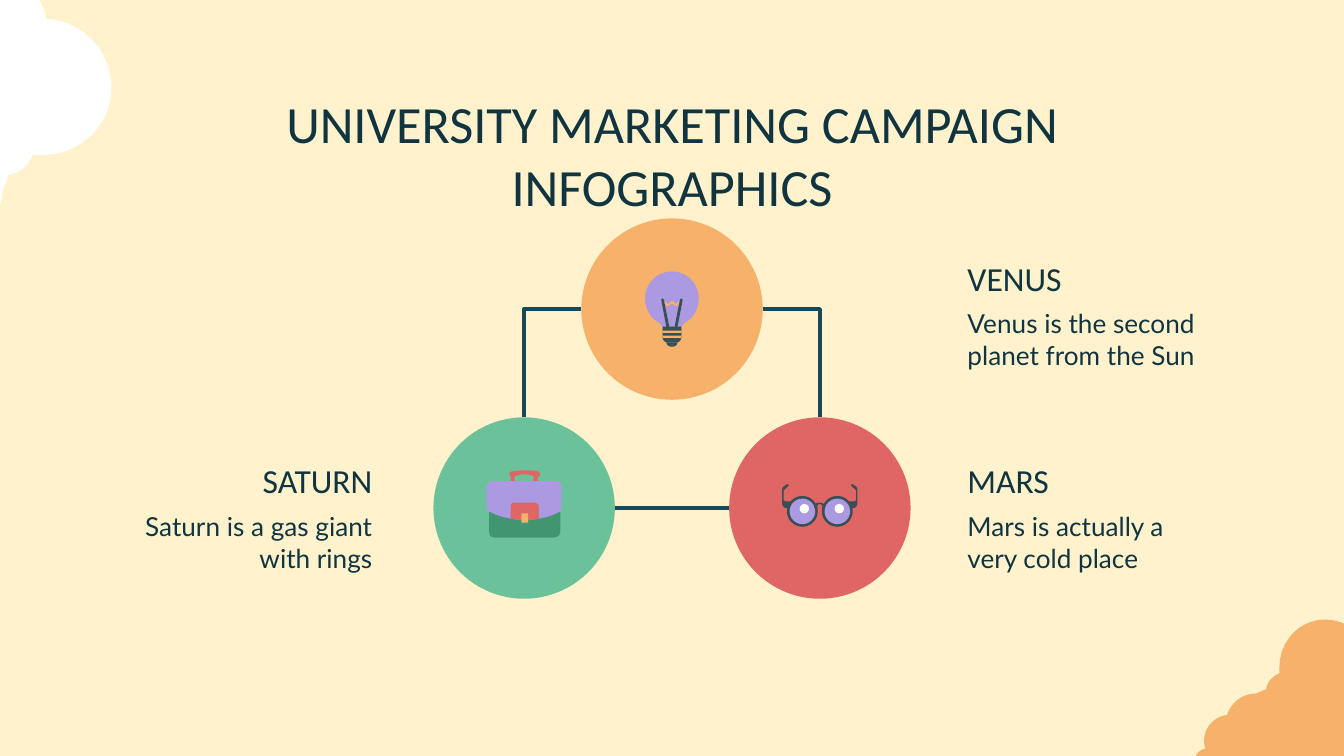
from dataclasses import dataclass

from pptx import Presentation
from pptx.dml.color import RGBColor
from pptx.enum.shapes import MSO_CONNECTOR as LINK, MSO_SHAPE as SHAPE
from pptx.enum.text import MSO_ANCHOR as ANCHOR, MSO_AUTO_SIZE as FIT, PP_ALIGN as ALIGN
from pptx.oxml import parse_xml
from pptx.oxml.ns import nsdecls, qn
from pptx.util import Inches, Pt


@dataclass(frozen=True)
class Theme:
    paper: str = "FFF2CC"
    ink: str = "103440"
    link: str = "174859"
    orange: str = "F6B26B"
    green: str = "6BC29A"
    forest: str = "41966F"
    red: str = "E06666"
    violet: str = "AB99E2"
    slate: str = "385054"
    white: str = "FFFFFF"
    head_font: str = "Calibri"
    body_font: str = "Lato"
    title_size: int = 28
    head_size: int = 18
    body_size: int = 14


T = Theme()
WIDTH, HEIGHT = 10, 5.625
MIDDLE, COLUMN = WIDTH / 2, 1.1
TOP_ROW, LOW_ROW = 2.3, 3.78
RADIUS = 0.675
LABEL_W = 1.91
LEFT_LABEL, RIGHT_LABEL = 0.96, 7.1

TITLE = "UNIVERSITY MARKETING CAMPAIGN INFOGRAPHICS"
LABELS = [
    ("VENUS", "Venus is the second planet from the Sun", RIGHT_LABEL, 1.89, ALIGN.LEFT),
    ("SATURN", "Saturn is a gas giant with rings", LEFT_LABEL, 3.4, ALIGN.RIGHT),
    ("MARS", "Mars is actually a very cold place", RIGHT_LABEL, 3.4, ALIGN.LEFT),
]

CLOUD = [
    (97, 0), (78, 0, 63, 16, 63, 35), (63, 36, 63, 38, 63, 40), (58, 42, 54, 46, 53, 52),
    (50, 53, 48, 54, 46, 55), (35, 55, 27, 62, 24, 71), (15, 72, 7, 80, 7, 90),
    (7, 92, 7, 94, 8, 96), (3, 97, 0, 101, 0, 105), (0, 111, 4, 115, 10, 115), (157, 115),
    (162, 115, 167, 111, 167, 105), (167, 100, 162, 96, 157, 96), (158, 94, 159, 91, 159, 89),
    (159, 88, 159, 87, 158, 86), (163, 84, 166, 79, 166, 74), (166, 66, 161, 61, 154, 60),
    (154, 59, 154, 59, 154, 58), (154, 45, 144, 35, 132, 33), (131, 15, 116, 0, 97, 0),
]
ROD = [(-7, -8), (-8, -7), (-4, 14), (-3, 14), (-2, 13), (-6, -7)]
TEMPLE = [
    (-24, -18), (-27, -16), (-28, -15, -28, -14, -28, -13), (-28, -4), (-28, -2, -27, 0, -25, 0),
    (-23, 0), (-21, -4), (-20, -4, -21, -5, -21, -5), (-26, -5), (-27, -6), (-27, -13),
    (-27, -13, -26, -14, -26, -14), (-23, -17),
]


def mirrored(part):
    kind, color, shape = part
    if kind == "path":
        flip = [tuple(-n if i % 2 == 0 else n for i, n in enumerate(step)) for step in shape]
    else:
        left, top, width, height = shape
        flip = (-left - width, top, width, height)
    return kind, color, flip


def pair(*part):
    return [part, mirrored(part)]


BULB = [
    ("path", T.slate, [(-3, 23), (3, 23), (4, 24), (4, 25), (4, 27, 2, 28, 0, 28),
                       (-2, 28, -4, 27, -4, 25), (-4, 24)]),
    ("path", T.violet, [
        (0, -28), (12, -28, 20, -18, 20, -8), (20, 1, 15, 7, 10, 10), (8, 11, 7, 13, 7, 15),
        (7, 21), (7, 23, 5, 25, 3, 25), (-3, 25), (-5, 25, -7, 23, -7, 21), (-7, 15),
        (-7, 13, -8, 11, -10, 10), (-15, 7, -20, 1, -20, -8), (-20, -18, -12, -28, 0, -28)]),
    ("path", T.orange, [
        (-6, -6), (-5, -6, -4, -4, -3, -4), (-2, -4, -1, -6, 0, -6), (1, -6, 2, -4, 3, -4),
        (4, -4, 5, -6, 6, -6), (7, -5), (6, -4), (5, -4, 4, -2, 3, -2), (2, -2, 1, -4, 0, -4),
        (-1, -4, -2, -2, -3, -2), (-4, -2, -5, -4, -6, -4), (-7, -5)]),
    *pair("path", T.slate, ROD),
    ("path", T.slate, [(-7, 13), (7, 13), (7, 21), (7, 23, 5, 25, 3, 25), (-3, 25),
                       (-5, 25, -7, 23, -7, 21)]),
    ("rect", T.orange, (-7, 16, 14, 1.7)),
    ("rect", T.orange, (-7, 19.7, 14, 1.7)),
]
BRIEFCASE = [
    *pair("round", T.red, (-10, -25, 3, 6)),
    ("path", T.forest, [(-26, 2), (26, 2), (27, 3), (27, 17), (27, 20, 25, 22, 22, 22), (-22, 22),
                        (-25, 22, -26, 20, -26, 17), (-26, 3)]),
    ("path", T.violet, [
        (-23, -20), (-26, -20, -28, -18, -28, -16), (-28, -1), (-28, 1, -27, 3, -25, 3),
        (-18, 7, -10, 8, -2, 9), (3, 9), (11, 8, 19, 7, 26, 3), (27, 3, 28, 1, 28, -1),
        (28, -16), (28, -18, 26, -20, 24, -20)]),
    ("path", T.red, [(-7, -4), (-9, -4, -10, -3, -10, -1), (-10, 8), (-2, 9), (3, 9), (11, 8),
                     (11, -1), (11, -3, 9, -4, 7, -4)]),
    ("round", T.orange, (-2, 4, 5, 7)),
    ("path", T.red, [
        (0, -28), (-3, -28, -7, -28, -10, -27), (-11, -26, -11, -25, -11, -25),
        (-11, -24, -10, -23, -9, -23), (-6, -24, -3, -25, 0, -25), (4, -25, 7, -24, 9, -23),
        (11, -23, 12, -24, 12, -25), (12, -26, 11, -26, 11, -27), (8, -28, 4, -28, 0, -28)]),
]
GLASSES = [
    *pair("path", T.slate, TEMPLE),
    *pair("oval", T.slate, (-24.5, -9, 23, 23)),
    *pair("oval", T.violet, (-22.5, -7, 19, 19)),
    ("oval", T.white, (-15, -3, 7, 7)),
    ("oval", T.white, (11, -3, 7, 7)),
    ("path", T.slate, [(-4, 0), (-4, -3, -3, -4, 0, -4), (2, -4, 4, -3, 4, 0), (2, 0),
                       (2, -2, 1, -3, 0, -3), (-1, -3, -2, -2, -2, 0)]),
]
CIRCLES = [
    (MIDDLE, TOP_ROW, T.orange, BULB),
    (MIDDLE - COLUMN, LOW_ROW, T.green, BRIEFCASE),
    (MIDDLE + COLUMN, LOW_ROW, T.red, GLASSES),
]
PRESETS = {"oval": SHAPE.OVAL, "rect": SHAPE.RECTANGLE, "round": SHAPE.ROUNDED_RECTANGLE}


def paint(shape, color):
    shape.shadow.inherit = False
    shape.fill.solid()
    shape.fill.fore_color.rgb = RGBColor.from_string(color)
    shape.line.fill.background()


def trace(steps, samples=10):
    points = [steps[0]]
    for step in steps[1:]:
        if len(step) == 2:
            points.append(step)
            continue
        nodes = [points[-1], step[:2], step[2:4], step[4:]]
        for i in range(1, samples + 1):
            t = i / samples
            weights = ((1 - t) ** 3, 3 * t * (1 - t) ** 2, 3 * t * t * (1 - t), t ** 3)
            points.append(tuple(sum(w * n[axis] for w, n in zip(weights, nodes)) for axis in (0, 1)))
    return points


def draw_outline(shapes, steps, color, place):
    points = [tuple(Inches(n) for n in place(x, y)) for x, y in trace(steps)]
    builder = shapes.build_freeform(*points[0], scale=1.0)
    builder.add_line_segments(points[1:], close=True)
    paint(builder.convert_to_shape(), color)


def draw_preset(shapes, kind, color, left, top, width, height):
    paint(shapes.add_shape(PRESETS[kind], *map(Inches, (left, top, width, height))), color)


def draw_icon(slide, parts, cx, cy):
    icon = slide.shapes.add_group_shape().shapes
    for kind, color, shape in parts:
        if kind == "path":
            draw_outline(icon, shape, color, lambda x, y: (cx + x / 100, cy + y / 100))
        else:
            left, top, width, height = (n / 100 for n in shape)
            draw_preset(icon, kind, color, cx + left, cy + top, width, height)


def draw_link(slide, kind, *ends):
    link = slide.shapes.add_connector(kind, *map(Inches, ends))
    link.line.color.rgb = RGBColor.from_string(T.link)
    link.line.width = Pt(2.25)
    props = link._element.spPr
    props.append(parse_xml(f"<a:effectLst {nsdecls('a')}/>"))
    if kind == LINK.ELBOW:
        props.find(qn("a:prstGeom")).set("prst", "bentConnector2")


def write(box, text, font, size, align, anchor=ANCHOR.TOP, spacing=None):
    frame = box.text_frame
    frame.word_wrap, frame.auto_size, frame.vertical_anchor = True, FIT.NONE, anchor
    frame.margin_left = frame.margin_right = frame.margin_top = frame.margin_bottom = Inches(0.1)
    line = frame.paragraphs[0]
    line.alignment, line.line_spacing = align, spacing
    run = line.add_run()
    run.text = text
    run.font.name, run.font.size = font, Pt(size)
    run.font.color.rgb = RGBColor.from_string(T.ink)


deck = Presentation()
deck.slide_width, deck.slide_height = Inches(WIDTH), Inches(HEIGHT)
slide = deck.slides.add_slide(deck.slide_layouts[5])
slide.background.fill.solid()
slide.background.fill.fore_color.rgb = RGBColor.from_string(T.paper)

draw_outline(slide.shapes, CLOUD, T.orange, lambda x, y: (8.89 + x / 100, 4.61 + y / 100))
draw_outline(slide.shapes, CLOUD, T.white, lambda x, y: (0.83 - y * 0.0147, 2.08 - x * 0.0147))

title = slide.shapes.title
title.left, title.top, title.width, title.height = map(Inches, (0.86, 0.58, 8.28, 0.63))
write(title, TITLE, T.head_font, T.title_size, ALIGN.CENTER)

for cx, cy, color, _ in CIRCLES:
    draw_preset(slide.shapes, "oval", color, cx - RADIUS, cy - RADIUS, 2 * RADIUS, 2 * RADIUS)
for side in (-1, 1):
    draw_link(slide, LINK.ELBOW, MIDDLE + side * RADIUS, TOP_ROW, MIDDLE + side * COLUMN, LOW_ROW - RADIUS)
reach = COLUMN - RADIUS
draw_link(slide, LINK.STRAIGHT, MIDDLE - reach, LOW_ROW, MIDDLE + reach, LOW_ROW)
for cx, cy, _, parts in CIRCLES:
    draw_icon(slide, parts, cx, cy)

for heading, detail, left, top, align in LABELS:
    body = slide.shapes.add_textbox(*map(Inches, (left, top + 0.3, LABEL_W, 0.53)))
    write(body, detail, T.body_font, T.body_size, align)
    head = slide.shapes.add_textbox(*map(Inches, (left, top, LABEL_W, 0.43)))
    write(head, heading, T.head_font, T.head_size, align, ANCHOR.BOTTOM, 0.9)

deck.save("out.pptx")
